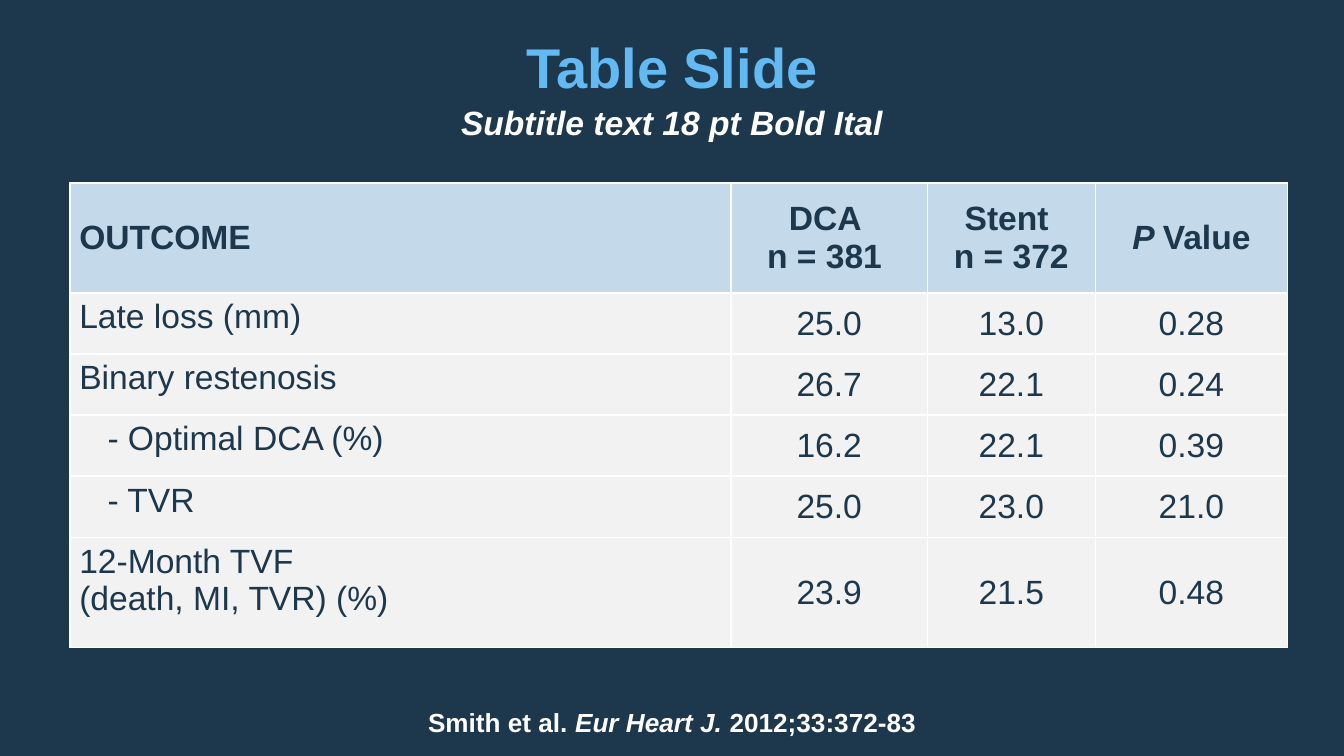
from dataclasses import dataclass
from typing import NamedTuple

from lxml import etree
from pptx import Presentation, util as u
from pptx.dml.color import RGBColor
from pptx.enum import text
from pptx.oxml.ns import qn

# Slide grid: 100 columns across, with square units
SLIDE_WIDTH = u.Inches(10)
SLIDE_HEIGHT = SLIDE_WIDTH * 9 // 16
UNIT = SLIDE_WIDTH // 100


@dataclass(frozen=True)
class Theme:
    font: str = "Arial"
    navy: str = "1D384C"
    sky: str = "63BAF2"
    white: str = "FFFFFF"
    header: str = "C4D9E9"
    body: str = "F2F2F2"
    title_size: int = 30
    text_size: int = 18
    source_size: int = 14


class Box(NamedTuple):
    left: float
    top: float
    width: float
    height: float


class Run(NamedTuple):
    words: str
    bold: bool = True
    italic: bool = False


@dataclass(frozen=True)
class Label:
    box: Box
    runs: tuple[Run, ...]
    size: int
    color: str
    anchor: text.MSO_ANCHOR = text.MSO_ANCHOR.MIDDLE
    line_spacing: float = 1.0


class Outcome(NamedTuple):
    name: str
    values: tuple[str, str, str]
    indent: float = 0


THEME = Theme()

LABELS = (
    Label(Box(7.5, 1.8, 85, 6.2), (Run("Table Slide"),), THEME.title_size, THEME.sky),
    Label(Box(12.5, 6.9, 75, 4.8), (Run("Subtitle text 18 pt Bold Ital", italic=True),),
          THEME.text_size, THEME.white, line_spacing=0.9),
    Label(Box(26.9, 52.1, 46.2, 5.5),
          (Run("Smith et al. "), Run("Eur Heart J. ", italic=True), Run("2012;33:372-83")),
          THEME.source_size, THEME.white, text.MSO_ANCHOR.TOP),
)

TABLE_LEFT, TABLE_TOP = 5.2, 13.6
COLUMNS = (49.2, 14.6, 12.5, 14.3)
TALL_ROW, ROW = 8.2, 4.55
HEADERS = (
    (Run("OUTCOME"),),
    (Run("DCA \nn = 381 "),),
    (Run("Stent \nn = 372"),),
    (Run("P ", italic=True), Run("Value")),
)
OUTCOMES = (
    Outcome("Late loss (mm)", ("25.0", "13.0", "0.28")),
    Outcome("Binary restenosis", ("26.7", "22.1", "0.24")),
    Outcome("- Optimal DCA (%)", ("16.2", "22.1", "0.39"), indent=2.1),
    Outcome("- TVR", ("25.0", "23.0", "21.0"), indent=2.1),
    Outcome("12-Month TVF \n(death, MI, TVR) (%)", ("23.9", "21.5", "0.48")),
)


def units(count: float) -> int:
    return round(count * UNIT)


def set_attributes(target, values: dict) -> None:
    for name, value in values.items():
        setattr(target, name, value)


def write_runs(paragraph, runs: tuple[Run, ...], size: int, color: str) -> None:
    for item in runs:
        for number, line in enumerate(item.words.split("\n")):
            if number:
                paragraph.add_line_break()
            run = paragraph.add_run()
            run.text = line
            set_attributes(run.font, {"name": THEME.font, "size": u.Pt(size),
                                      "bold": item.bold, "italic": item.italic})
            run.font.color.rgb = RGBColor.from_string(color)


def draw_label(slide, label: Label) -> None:
    frame = slide.shapes.add_textbox(*map(units, label.box)).text_frame
    set_attributes(frame, {"word_wrap": True, "vertical_anchor": label.anchor,
                           "margin_left": units(0.5), "margin_right": units(0.5)})
    paragraph = frame.paragraphs[0]
    set_attributes(paragraph, {"alignment": text.PP_ALIGN.CENTER,
                               "line_spacing": label.line_spacing})
    write_runs(paragraph, label.runs, label.size, label.color)


def draw_borders(cell) -> None:
    properties = cell._tc.get_or_add_tcPr()
    for side in ("a:lnL", "a:lnR", "a:lnT", "a:lnB"):
        line = etree.SubElement(properties, qn(side), w=str(u.Pt(1)))
        fill = etree.SubElement(line, qn("a:solidFill"))
        etree.SubElement(fill, qn("a:srgbClr"), val=THEME.white)


def draw_cell(cell, runs: tuple[Run, ...], fill: str, centered: bool,
              middle: bool, indent: float = 0) -> None:
    draw_borders(cell)
    cell.fill.solid()
    cell.fill.fore_color.rgb = RGBColor.from_string(fill)
    anchor = text.MSO_ANCHOR.MIDDLE if middle else text.MSO_ANCHOR.TOP
    set_attributes(cell, {"vertical_anchor": anchor,
                          "margin_left": units(0.7 + indent), "margin_right": units(0.7),
                          "margin_top": units(0.4), "margin_bottom": units(0.4)})
    paragraph = cell.text_frame.paragraphs[0]
    paragraph.alignment = text.PP_ALIGN.CENTER if centered else text.PP_ALIGN.LEFT
    write_runs(paragraph, runs, THEME.text_size, THEME.navy)


def draw_table(slide) -> None:
    heights = (TALL_ROW, *[ROW] * (len(OUTCOMES) - 1), TALL_ROW)
    box = Box(TABLE_LEFT, TABLE_TOP, sum(COLUMNS), sum(heights))
    table = slide.shapes.add_table(len(heights), len(COLUMNS), *map(units, box)).table
    table.horz_banding = False
    for column, width in zip(table.columns, COLUMNS):
        column.width = units(width)
    for row, height in zip(table.rows, heights):
        row.height = units(height)

    # Header row
    for index, runs in enumerate(HEADERS):
        draw_cell(table.cell(0, index), runs, THEME.header, centered=index > 0, middle=True)

    # One row per outcome
    for row_index, outcome in enumerate(OUTCOMES, start=1):
        for index, words in enumerate((outcome.name, *outcome.values)):
            is_value = index > 0
            draw_cell(table.cell(row_index, index), (Run(words, bold=False),), THEME.body,
                      centered=is_value, middle=is_value,
                      indent=0 if is_value else outcome.indent)


def main() -> None:
    presentation = Presentation()
    set_attributes(presentation, {"slide_width": SLIDE_WIDTH, "slide_height": SLIDE_HEIGHT})
    slide = presentation.slides.add_slide(presentation.slide_layouts[6])
    slide.background.fill.solid()
    slide.background.fill.fore_color.rgb = RGBColor.from_string(THEME.navy)

    draw_table(slide)
    for label in LABELS:
        draw_label(slide, label)
    presentation.save("out.pptx")


if __name__ == "__main__":
    main()
